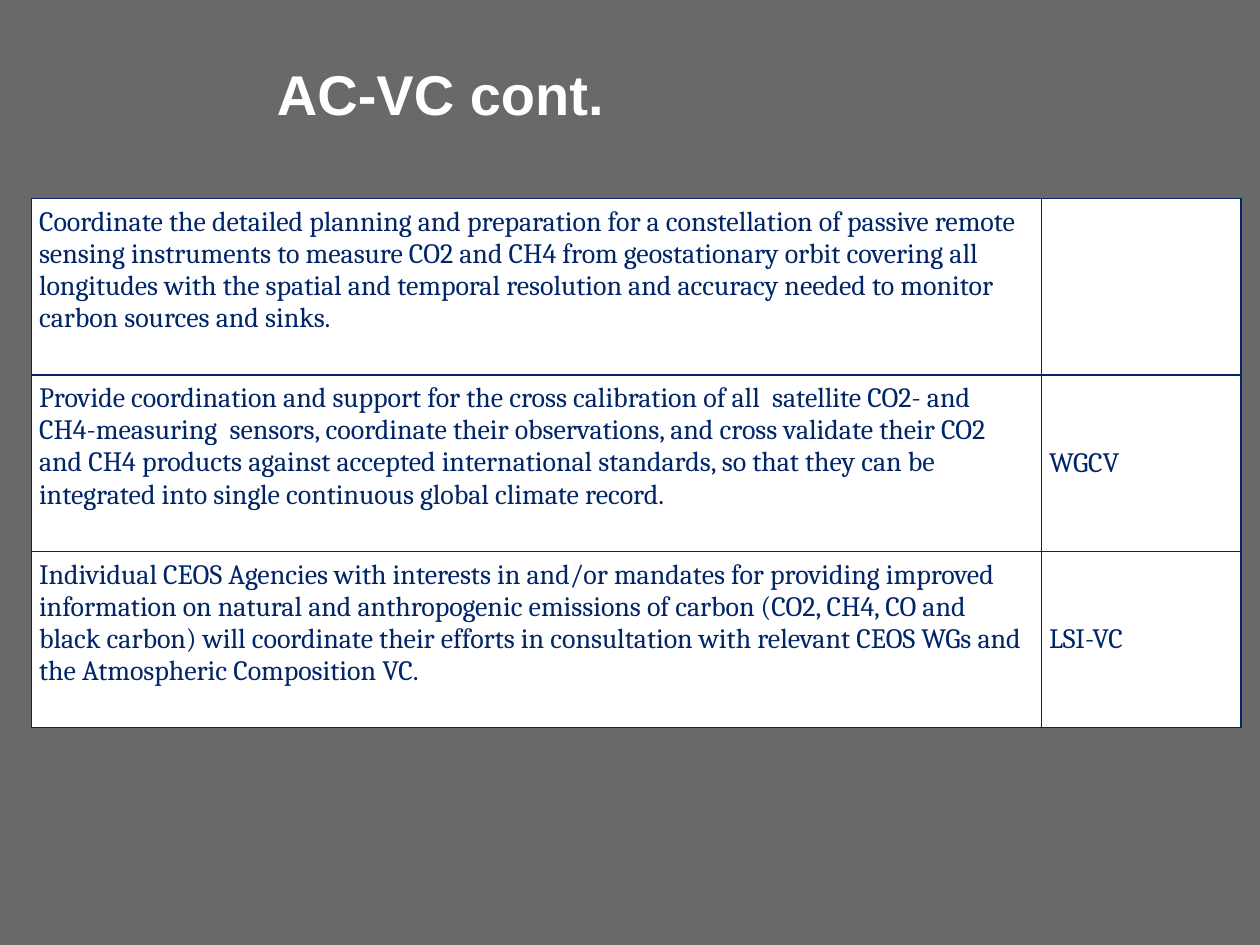
from lxml.etree import SubElement
from pptx import Presentation
from pptx.dml.color import RGBColor
from pptx.enum.text import MSO_ANCHOR
from pptx.oxml.ns import qn
from pptx.util import Inches, Pt

COLORS = {"background": "696969", "navy": "002569", "white": "FFFFFF"}
TITLE_FONT = {"name": "Arial", "size": Pt(32), "bold": True}
CELL_FONT = {"name": "Cambria", "size": Pt(16), "bold": False}
ACTIONS = [
    ("Coordinate the detailed planning and preparation for a constellation of passive remote "
     "sensing instruments to measure CO2 and CH4 from geostationary orbit covering all "
     "longitudes with the spatial and temporal resolution and accuracy needed to monitor "
     "carbon sources and sinks.", ""),
    ("Provide coordination and support for the cross calibration of all  satellite CO2- and "
     "CH4-measuring  sensors, coordinate their observations, and cross validate their CO2 "
     "and CH4 products against accepted international standards, so that they can be "
     "integrated into single continuous global climate record.", "WGCV"),
    ("Individual CEOS Agencies with interests in and/or mandates for providing improved "
     "information on natural and anthropogenic emissions of carbon (CO2, CH4, CO and "
     "black carbon) will coordinate their efforts in consultation with relevant CEOS WGs and "
     "the Atmospheric Composition VC.", "LSI-VC"),
]


class SlideBuilder:
    def __init__(self, deck):
        self.width, self.height = deck.slide_width, deck.slide_height
        self.slide = deck.slides.add_slide(deck.slide_layouts[6])
        fill = self.slide.background.fill
        fill.solid()
        fill.fore_color.rgb = self.color("background")

    def color(self, name):
        return RGBColor.from_string(COLORS[name])

    def area(self, left, top, width, height):
        return (round(left * self.width), round(top * self.height),
                round(width * self.width), round(height * self.height))

    def apply(self, target, values):
        for name, value in values.items():
            setattr(target, name, value)

    def put_text(self, frame, text, font, color):
        para = frame.paragraphs[0]
        para.text = text
        for target in (para.font, *(span.font for span in para.runs)):
            self.apply(target, font)
            target.color.rgb = self.color(color)

    def title(self, text, *shares):
        box = self.slide.shapes.add_textbox(*self.area(*shares))
        self.apply(box.text_frame, {"word_wrap": True, "margin_top": Inches(0.1)})
        self.put_text(box.text_frame, text, TITLE_FONT, "white")

    def border(self, cell):
        properties = cell._tc.get_or_add_tcPr()
        for index, side in enumerate(("a:lnL", "a:lnR", "a:lnT", "a:lnB")):
            line = SubElement(properties, qn(side), w=str(Pt(1)))
            fill = SubElement(line, qn("a:solidFill"))
            SubElement(fill, qn("a:srgbClr"), val=COLORS["navy"])
            properties.insert(index, line)

    def table(self, rows, column_shares, *shares):
        area = self.area(*shares)
        table = self.slide.shapes.add_table(len(rows), len(column_shares), *area).table
        self.apply(table, {"first_row": False, "horz_banding": False})
        for column, share in zip(table.columns, column_shares):
            column.width = round(area[2] * share)
        margins = {f"margin_{side}": Inches(0.06) for side in ("left", "right", "top", "bottom")}
        anchors = (MSO_ANCHOR.TOP, MSO_ANCHOR.MIDDLE)
        for row, texts in zip(table.rows, rows):
            for cell, text, anchor in zip(row.cells, texts, anchors):
                self.apply(cell, {**margins, "vertical_anchor": anchor})
                cell.fill.solid()
                cell.fill.fore_color.rgb = self.color("white")
                self.put_text(cell.text_frame, text, CELL_FONT, "navy")
                self.border(cell)


def main():
    deck = Presentation()
    deck.slide_width, deck.slide_height = Inches(10), Inches(7.5)
    builder = SlideBuilder(deck)
    builder.table(ACTIONS, (0.835, 0.165), 0.025, 0.21, 0.96, 0.56)
    builder.title("AC-VC cont.", 0.21, 0.05, 0.61, 0.15)
    deck.save("out.pptx")


if __name__ == "__main__":
    main()
